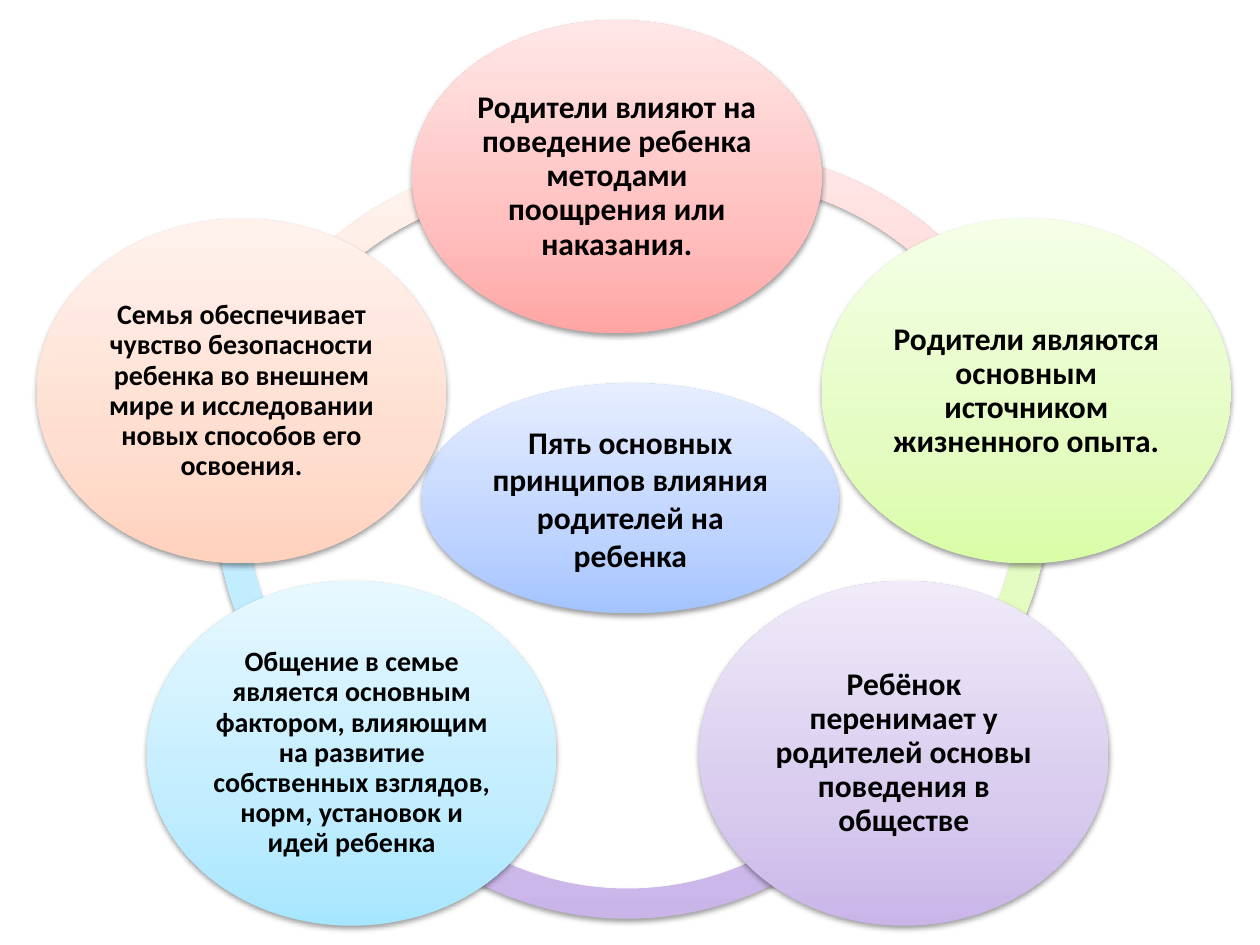
from copy import deepcopy
from lxml import etree
from pptx import Presentation
from pptx.dml.color import RGBColor
from pptx.enum.shapes import MSO_SHAPE as Preset
from pptx.enum.text import MSO_ANCHOR as Anchor, PP_ALIGN as Align
from pptx.oxml.ns import qn
from pptx.util import Pt

# Gradient colours from bottom to top
COLORS = {
    "orange": ("FFD2BD", "FFDED0", "FFF2ED"),
    "cyan": ("A7E6FF", "C1EDFF", "E7F8FF"),
    "violet": ("C9B5E8", "D8CBEE", "F0EAF9"),
    "green": ("DAFDA7", "E4FCC2", "F5FFE7"),
    "red": ("FFA6A5", "FFC0BF", "FFE7E7"),
    "blue": ("A4C4FF", "BFD4FF", "E6EEFF"),
    "black": "000000",
}
STOPS = (0, 0.35, 1)
ARC_SIZE = 373
ARC_THICKNESS = 0.046

deck = Presentation()
deck.slide_width, deck.slide_height = Pt(720), Pt(540)
page = deck.slides.add_slide(deck.slide_layouts[6])


def add_shaded(preset, left, top, width, height, color):
    """Add a shape with a three-stop gradient and a soft shadow below."""
    shape = page.shapes.add_shape(preset, Pt(left), Pt(top), Pt(width), Pt(height))
    shape.fill.gradient()
    shape.fill.gradient_angle = 90
    properties = shape._element.spPr
    stop_list = properties.find(".//" + qn("a:gsLst"))
    stop_list.append(deepcopy(stop_list[0]))
    for stop, position, value in zip(shape.fill.gradient_stops, STOPS, COLORS[color]):
        stop.position = position
        stop.color.rgb = RGBColor.from_string(value)
    shape.line.fill.background()
    shape.shadow.inherit = False
    effects = properties.find(qn("a:effectLst"))
    shadow = etree.SubElement(effects, qn("a:outerShdw"), blurRad=str(Pt(3.1)),
                              dist=str(Pt(1.6)), dir="5400000", rotWithShape="0")
    shade = etree.SubElement(shadow, qn("a:srgbClr"), val=COLORS["black"])
    etree.SubElement(shade, qn("a:alpha"), val="38000")
    return shape


def add_oval(left, top, width, height, color, size, spacing, inset, lines):
    """Add an ellipse with centred bold text, one paragraph a line."""
    frame = add_shaded(Preset.OVAL, left, top, width, height, color).text_frame
    frame.word_wrap = True
    frame.vertical_anchor = Anchor.MIDDLE
    frame.margin_left = frame.margin_right = Pt(inset)
    frame.margin_top = frame.margin_bottom = Pt(inset)
    for index, line in enumerate(lines):
        para = frame.add_paragraph() if index else frame.paragraphs[0]
        para.alignment = Align.CENTER
        para.line_spacing = spacing
        span = para.add_run()
        span.text = line
        span.font.name = "Calibri"
        span.font.size = Pt(size)
        span.font.bold = True
        span.font.color.rgb = RGBColor.from_string(COLORS["black"])


# Ring of arcs: left, top, start, end, colour
arcs = [
    (125.5, 91.5, 118.5, 169.71, "orange"),
    (123, 98, 76, 119.66, "cyan"),
    (172, 152, 18.09, 89.91, "violet"),
    (227, 93.5, 205.14, 33.3, "green"),
    (224.5, 86.5, 150.76, 206.5, "red"),
]
for left, top, start, end, color in arcs:
    arc = add_shaded(Preset.BLOCK_ARC, left, top, ARC_SIZE, ARC_SIZE, color)
    for index, value in enumerate((start, end, ARC_THICKNESS)):
        arc.adjustments[index] = value

# Central topic
add_oval(241, 219, 238.5, 131.5, "blue", 18, 1, 2,
         ["Пять основных", "принципов влияния", "родителей на ребенка"])

# Five principles: left, top, height, colour, text size, inset, text
principles = [
    (235.5, 11.5, 179, "red", 18, 2,
     "Родители влияют на поведение ребенка методами поощрения или наказания."),
    (469.5, 125, 197, "green", 18, 2,
     "Родители являются основным источником жизненного опыта."),
    (399.5, 332, 197, "violet", 18, 2,
     "Ребёнок перенимает у родителей основы поведения в обществе"),
    (84, 332, 197, "cyan", 16, 1.5,
     "Общение в семье является основным фактором, влияющим на развитие "
     "собственных взглядов, норм, установок и идей ребенка"),
    (21, 125, 197, "orange", 16, 1.5,
     "Семья обеспечивает чувство безопасности ребенка во внешнем мире и "
     "исследовании новых способов его освоения."),
]
for left, top, height, color, size, inset, text in principles:
    add_oval(left, top, 234, height, color, size, 0.9, inset, [text])

deck.save("out.pptx")
